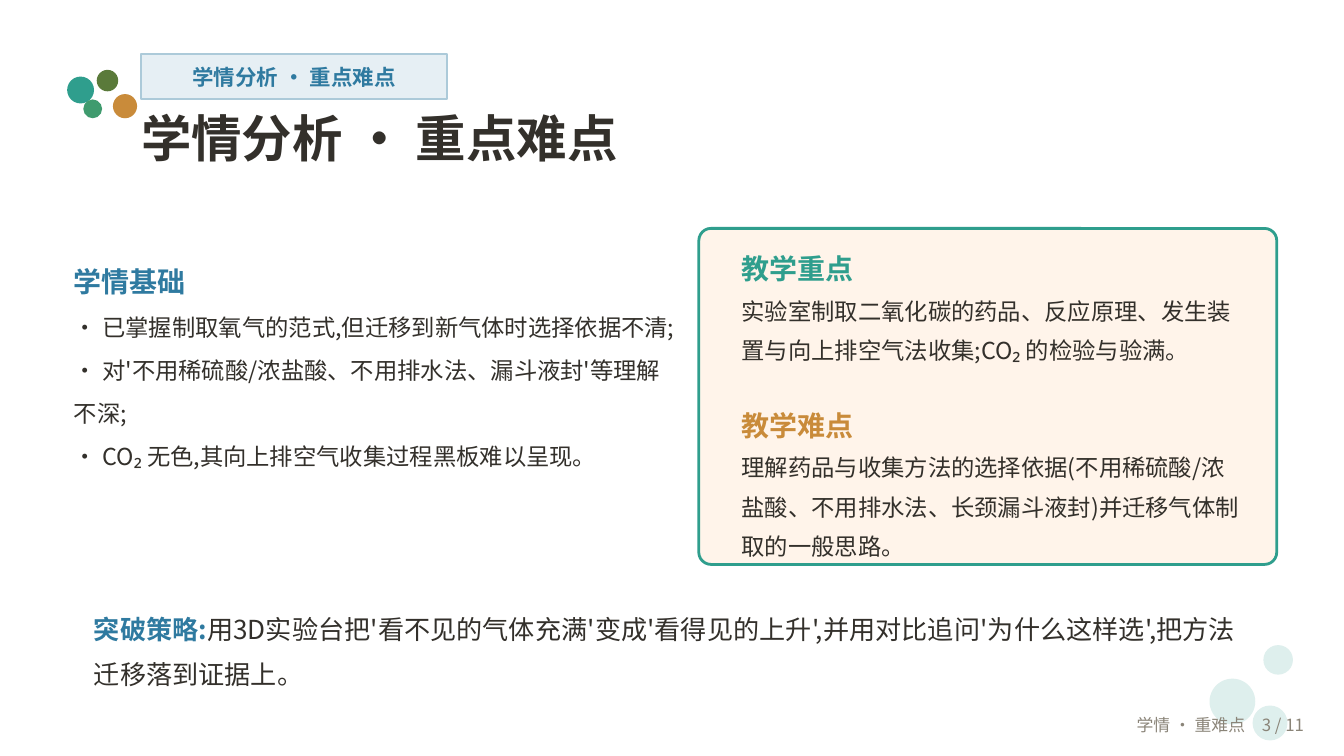
from lxml.etree import SubElement
from pptx import Presentation
from pptx.dml.color import RGBColor
from pptx.enum.shapes import MSO_SHAPE
from pptx.enum.text import MSO_ANCHOR, PP_ALIGN
from pptx.oxml.ns import qn
from pptx.util import Inches, Pt

FONT = "Noto Sans CJK SC"
COLORS = {
    "teal": "2F9E8D", "mist": "DEEFED", "olive": "5A7A3A", "green": "3F9B6E",
    "amber": "C98B3A", "blue": "2F7AA0", "ice": "E6EFF4", "ice_edge": "ACCAD9",
    "ink": "33302B", "cream": "FFF4EA", "grey": "8A8478",
}

deck = Presentation()
deck.slide_width = Inches(10)
deck.slide_height = deck.slide_width * 9 // 16
column, row = deck.slide_width / 100, deck.slide_height / 56.25
page = deck.slides.add_slide(deck.slide_layouts[6])


def add_figure(kind, left, top, width, height, fill, edge=None, weight=1):
    figure = page.shapes.add_shape(
        kind, round(left * column), round(top * row), round(width * column), round(height * row))
    figure.shadow.inherit = False
    figure.fill.solid()
    figure.fill.fore_color.rgb = RGBColor.from_string(COLORS[fill])
    if edge:
        figure.line.color.rgb = RGBColor.from_string(COLORS[edge])
        figure.line.width = Pt(weight)
    else:
        figure.line.fill.background()
    return figure


def write(frame, paragraphs, anchor, align=PP_ALIGN.LEFT, leading=None, inset=True):
    frame.word_wrap = True
    frame.vertical_anchor = anchor
    if not inset:
        frame.margin_left = frame.margin_top = frame.margin_right = frame.margin_bottom = 0
    for index, spans in enumerate(paragraphs):
        paragraph = frame.add_paragraph() if index else frame.paragraphs[0]
        paragraph.alignment = align
        if leading:
            paragraph.line_spacing = Pt(leading)
        for text, size, color, bold in spans:
            span = paragraph.add_run()
            span.text = text
            span.font.size, span.font.bold, span.font.name = Pt(size), bold, FONT
            span.font.color.rgb = RGBColor.from_string(COLORS[color])
            SubElement(span.font._element, qn("a:ea")).set("typeface", FONT)


bubbles = [
    (90, 50.5, 3.4, "mist"), (94, 48, 2.2, "mist"), (93.2, 52.5, 2.6, "mist"),
    (5, 5.7, 2, "teal"), (7.2, 5.2, 1.6, "olive"),
    (6.2, 7.4, 1.4, "green"), (8.4, 7, 1.8, "amber"),
]
for left, top, size, color in bubbles:
    add_figure(MSO_SHAPE.OVAL, left, top, size, size, color)

topic = "学情分析 · 重点难点"
tag = add_figure(MSO_SHAPE.RECTANGLE, 10.5, 4, 22.75, 3.4, "ice", "ice_edge")
write(tag.text_frame, [[(topic, 11.5, "blue", True)]],
      MSO_ANCHOR.MIDDLE, PP_ALIGN.CENTER, inset=False)

title = [[(topic, 27, "ink", True)]]
basis = [[("学情基础", 15, "blue", True)]] + [[(text, 12.5, "ink", False)] for text in (
    "· 已掌握制取氧气的范式,但迁移到新气体时选择依据不清;",
    "· 对'不用稀硫酸/浓盐酸、不用排水法、漏斗液封'等理解不深;",
    "· CO₂ 无色,其向上排空气收集过程黑板难以呈现。",
)]
focus = [
    [("教学重点", 15, "teal", True)],
    [("实验室制取二氧化碳的药品、反应原理、发生装置与向上排空气法收集;CO₂ 的检验与验满。",
      12.5, "ink", False)],
    [("教学难点", 15, "amber", True)],
    [("理解药品与收集方法的选择依据(不用稀硫酸/浓盐酸、不用排水法、长颈漏斗液封)并迁移气体制取的一般思路。",
      12.5, "ink", False)],
]
strategy = [[
    ("突破策略:", 14, "blue", True),
    ("用3D实验台把'看不见的气体充满'变成'看得见的上升',并用对比追问'为什么这样选',把方法迁移落到证据上。",
     14, "ink", False),
]]
footer = [[("学情 · 重难点　3 / 11", 9, "grey", False)]]

top_anchor, middle = MSO_ANCHOR.TOP, MSO_ANCHOR.MIDDLE
left_align, right_align = PP_ALIGN.LEFT, PP_ALIGN.RIGHT
texts = [
    (10.5, 8, 84, 5.5, title, top_anchor, left_align, None, False),
    (5.5, 19, 45, 18, basis, top_anchor, left_align, 23, False),
    (54.2, 19, 39.2, 22, focus, middle, left_align, 21, True),
    (6, 44.5, 88.5, 7, strategy, middle, left_align, 24, True),
    (80, 52.4, 18, 3, footer, middle, right_align, None, True),
]
for left, top, width, height, paragraphs, anchor, align, leading, inset in texts:
    if paragraphs is focus:
        card = add_figure(MSO_SHAPE.ROUNDED_RECTANGLE, 52, 17, 43, 25, "cream", "teal", 1.5)
        card.adjustments[0] = 0.036
    box = page.shapes.add_textbox(
        round(left * column), round(top * row), round(width * column), round(height * row))
    write(box.text_frame, paragraphs, anchor, align, leading, inset)
    if paragraphs is focus:
        box.text_frame.paragraphs[2].space_before = Pt(leading)

deck.save("out.pptx")
